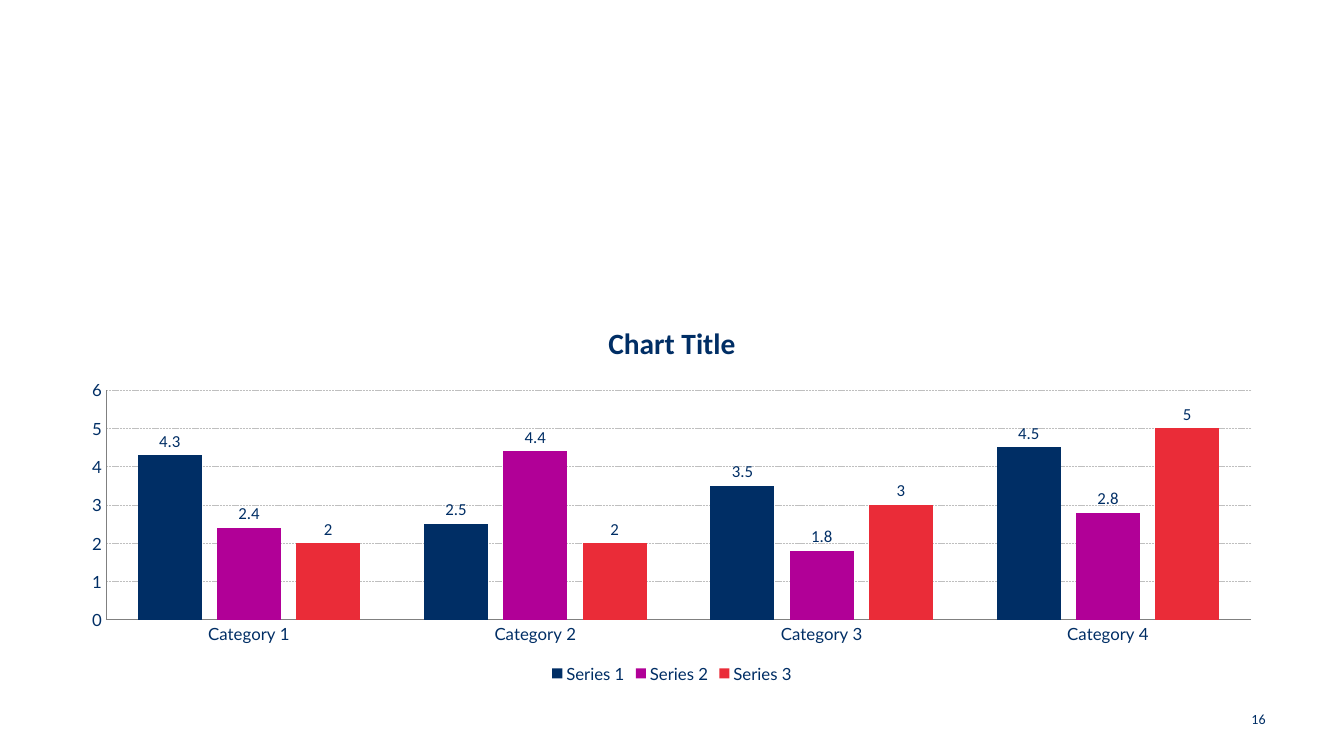
from lxml import etree
from pptx import Presentation
from pptx.chart.data import CategoryChartData
from pptx.dml.color import RGBColor
from pptx.enum.chart import XL_CHART_TYPE, XL_LABEL_POSITION, XL_LEGEND_POSITION, XL_TICK_MARK
from pptx.enum.dml import MSO_LINE
from pptx.enum.text import MSO_ANCHOR, PP_ALIGN
from pptx.oxml.ns import qn
from pptx.util import Inches, Pt

NAVY = RGBColor(0x00, 0x2E, 0x65)
PURPLE = RGBColor(0xB1, 0x00, 0x97)
RED = RGBColor(0xEA, 0x2C, 0x38)
AXIS_GREY = RGBColor(0x80, 0x80, 0x80)
GRID_GREY = RGBColor(0xBF, 0xBF, 0xBF)

TITLE = "Chart Title"
PAGE_NUMBER = "16"
CATEGORIES = ["Category 1", "Category 2", "Category 3", "Category 4"]
SERIES = [
    ("Series 1", (4.3, 2.5, 3.5, 4.5), NAVY),
    ("Series 2", (2.4, 4.4, 1.8, 2.8), PURPLE),
    ("Series 3", (2, 2, 3, 5), RED),
]
CHART_BOX = (0.68, 3.02, 11.97, 3.8)
PLOT_BOX = (1.05, 3.87, 11.36, 2.28)
NUMBER_BOX = (9.76, 6.93, 2.89, 0.4)


def set_font(font, size, name, bold=False):
    font.size = Pt(size)
    font.name = name
    font.bold = bold
    font.color.rgb = NAVY


def set_line(line, color):
    line.color.rgb = color
    line.width = Pt(0.5)


def place_plot(chart):
    """Fix the inner plot area as fractions of the chart frame."""
    left, top, width, height = CHART_BOX
    x, y, w, h = PLOT_BOX
    settings = [
        ("layoutTarget", "inner"), ("xMode", "edge"), ("yMode", "edge"),
        ("x", (x - left) / width), ("y", (y - top) / height),
        ("w", w / width), ("h", h / height),
    ]
    plot_area = chart.element.find(".//" + qn("c:plotArea"))
    layout = plot_area.find(qn("c:layout"))
    if layout is None:
        layout = etree.Element(qn("c:layout"))
        plot_area.insert(0, layout)
    manual = etree.SubElement(layout, qn("c:manualLayout"))
    for tag, value in settings:
        etree.SubElement(manual, qn("c:" + tag)).set("val", str(value))


def add_column_chart(slide):
    data = CategoryChartData()
    data.categories = CATEGORIES
    for name, values, _ in SERIES:
        data.add_series(name, values)
    chart = slide.shapes.add_chart(
        XL_CHART_TYPE.COLUMN_CLUSTERED, *map(Inches, CHART_BOX), data).chart
    set_font(chart.font, 10, "Lato")

    chart.has_title = True
    r = chart.chart_title.text_frame.paragraphs[0].add_run()
    r.text = TITLE
    set_font(r.font, 21, "Calibri", bold=True)

    chart.has_legend = True
    chart.legend.position = XL_LEGEND_POSITION.BOTTOM
    chart.legend.include_in_layout = False
    set_font(chart.legend.font, 12, "Lato")

    for axis in (chart.category_axis, chart.value_axis):
        axis.major_tick_mark = axis.minor_tick_mark = XL_TICK_MARK.NONE
        set_font(axis.tick_labels.font, 12, "Lato")
        set_line(axis.format.line, AXIS_GREY)
    value_axis = chart.value_axis
    value_axis.minimum_scale, value_axis.maximum_scale = 0, 6
    value_axis.major_unit = 1
    grid = value_axis.major_gridlines.format.line
    set_line(grid, GRID_GREY)
    grid.dash_style = MSO_LINE.SQUARE_DOT

    plot = chart.plots[0]
    plot.vary_by_categories = False
    plot.gap_width = 100
    plot.overlap = -24
    for series, (_, _, color) in zip(plot.series, SERIES):
        series.format.fill.solid()
        series.format.fill.fore_color.rgb = color
        labels = series.data_labels
        labels.show_value = True
        labels.position = XL_LABEL_POSITION.OUTSIDE_END
        set_font(labels.font, 12, "Calibri")
    place_plot(chart)


def add_page_number(slide):
    tf = slide.shapes.add_textbox(*map(Inches, NUMBER_BOX)).text_frame
    tf.word_wrap = True
    tf.vertical_anchor = MSO_ANCHOR.MIDDLE
    p = tf.paragraphs[0]
    p.alignment = PP_ALIGN.RIGHT
    r = p.add_run()
    r.text = PAGE_NUMBER
    set_font(r.font, 10, "Calibri")


def main():
    prs = Presentation()
    prs.slide_width, prs.slide_height = Inches(13.33), Inches(7.5)
    slide = prs.slides.add_slide(prs.slide_layouts[6])
    add_page_number(slide)
    add_column_chart(slide)
    prs.save("out.pptx")


if __name__ == "__main__":
    main()
